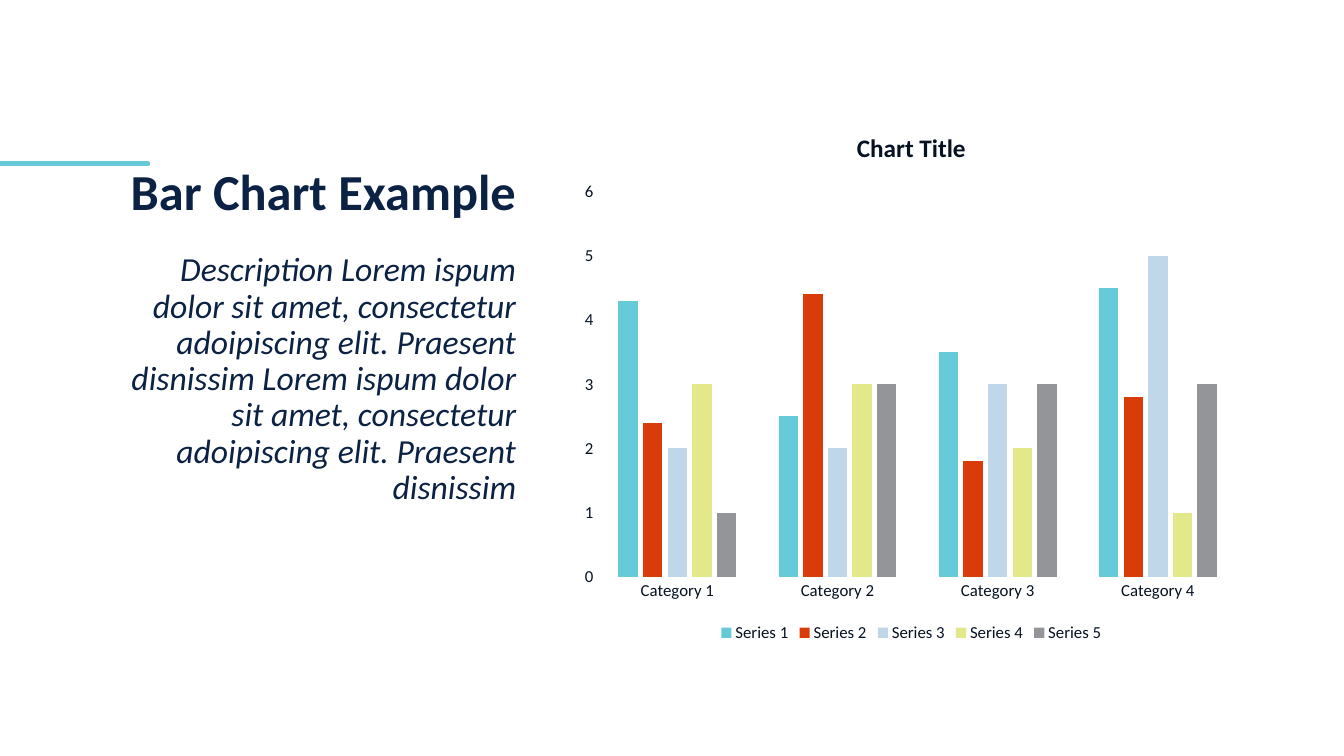
from pptx import Presentation
from pptx import util as u
from pptx.chart.data import CategoryChartData
from pptx.dml.color import RGBColor
from pptx.enum import chart as charts, shapes, text
from pptx.oxml.ns import qn
from lxml import etree

EMU_PER_PX = 9525
NAVY, INK, TEAL, WHITE = "0C2244", "061122", "66CAD8", "FFFFFF"
DESCRIPTION = (
    "Description Lorem ispum dolor sit amet, consectetur adoipiscing elit. "
    "Praesent disnissim Lorem ispum dolor sit amet, consectetur adoipiscing "
    "elit. Praesent disnissim"
)
CATEGORIES = [f"Category {n}" for n in range(1, 5)]
SERIES = [
    (TEAL, (4.3, 2.5, 3.5, 4.5)),
    ("D93C08", (2.4, 4.4, 1.8, 2.8)),
    ("BFD7E8", (2, 2, 3, 5)),
    ("E3E98A", (3, 3, 2, 1)),
    ("939598", (1, 3, 3, 3)),
]


def px(*lengths):
    """Turn pixel lengths into a list of EMU lengths."""
    return [u.Emu(length * EMU_PER_PX) for length in lengths]


def colour(hex_value):
    """Turn a hex string into a colour."""
    return RGBColor.from_string(hex_value)


def apply(target, **values):
    """Set each named attribute on the target."""
    for name, value in values.items():
        setattr(target, name, value)


def style_font(font, size, hex_value, **values):
    """Set the Calibri face, size, colour and any further font values."""
    apply(font, name="Calibri", size=u.Pt(size), **values)
    font.color.rgb = colour(hex_value)


def style_line(line, hex_value, width):
    """Set the colour and width of a line."""
    line.color.rgb = colour(hex_value)
    line.width = u.Pt(width)


def add_accent(slide, start_x, end_x, y):
    """Draw the rounded teal accent line."""
    accent = slide.shapes.add_connector(
        shapes.MSO_CONNECTOR.STRAIGHT, *px(start_x, y, end_x, y))
    style_line(accent.line, TEAL, 3.25)
    properties = accent.element.spPr
    properties.find(qn("a:ln")).set("cap", "rnd")
    etree.SubElement(properties, qn("a:effectLst"))


def add_copy(slide, wording, box, anchor, size, **font_values):
    """Add a right-aligned navy text block."""
    frame = slide.shapes.add_textbox(*px(*box)).text_frame
    apply(frame, word_wrap=True, vertical_anchor=anchor)
    paragraph = frame.paragraphs[0]
    apply(paragraph, text=wording, alignment=text.PP_ALIGN.RIGHT, line_spacing=0.9)
    style_font(paragraph.runs[0].font, size, NAVY, **font_values)


def style_axes(chart):
    """Set both axes, with white lines that vanish on the page."""
    for axis in (chart.category_axis, chart.value_axis):
        apply(axis, major_tick_mark=charts.XL_TICK_MARK.NONE,
              minor_tick_mark=charts.XL_TICK_MARK.NONE)
        style_font(axis.tick_labels.font, 12, INK)
    style_line(chart.category_axis.format.line, WHITE, 0.75)
    scale = chart.value_axis
    apply(scale, minimum_scale=0, maximum_scale=6, major_unit=1)
    scale.format.line.fill.background()
    style_line(scale.major_gridlines.format.line, WHITE, 0.75)


def add_bar_chart(slide, box):
    """Add the clustered column chart with its title and legend."""
    figures = CategoryChartData()
    figures.categories = CATEGORIES
    for number, (_, values) in enumerate(SERIES, 1):
        figures.add_series(f"Series {number}", values)
    chart = slide.shapes.add_chart(
        charts.XL_CHART_TYPE.COLUMN_CLUSTERED, *px(*box), figures).chart
    style_font(chart.font, 10, INK)
    apply(chart, has_title=True, has_legend=True)
    heading = chart.chart_title.text_frame
    heading.text = "Chart Title"
    style_font(heading.paragraphs[0].runs[0].font, 18, INK, bold=True)
    chart.chart_title.include_in_layout = False
    apply(chart.legend, position=charts.XL_LEGEND_POSITION.BOTTOM,
          include_in_layout=False)
    style_font(chart.legend.font, 12, INK)
    style_axes(chart)
    bars = chart.plots[0]
    apply(bars, gap_width=219, overlap=-27, vary_by_categories=False)
    for series, (fill, _) in zip(bars.series, SERIES):
        series.format.fill.solid()
        series.format.fill.fore_color.rgb = colour(fill)


def main():
    """Build the slide and save it."""
    deck = Presentation()
    deck.slide_width, deck.slide_height = px(1280, 720)
    slide = deck.slides.add_slide(deck.slide_layouts[6])
    add_accent(slide, 0, 141, 156)
    add_bar_chart(slide, (544, 104, 648, 512))
    add_copy(slide, DESCRIPTION, (88, 236, 413, 380),
             text.MSO_ANCHOR.TOP, 24, italic=True)
    add_copy(slide, "Bar Chart Example", (88, 48, 413, 168),
             text.MSO_ANCHOR.BOTTOM, 36, bold=True)
    deck.save("out.pptx")


if __name__ == "__main__":
    main()
